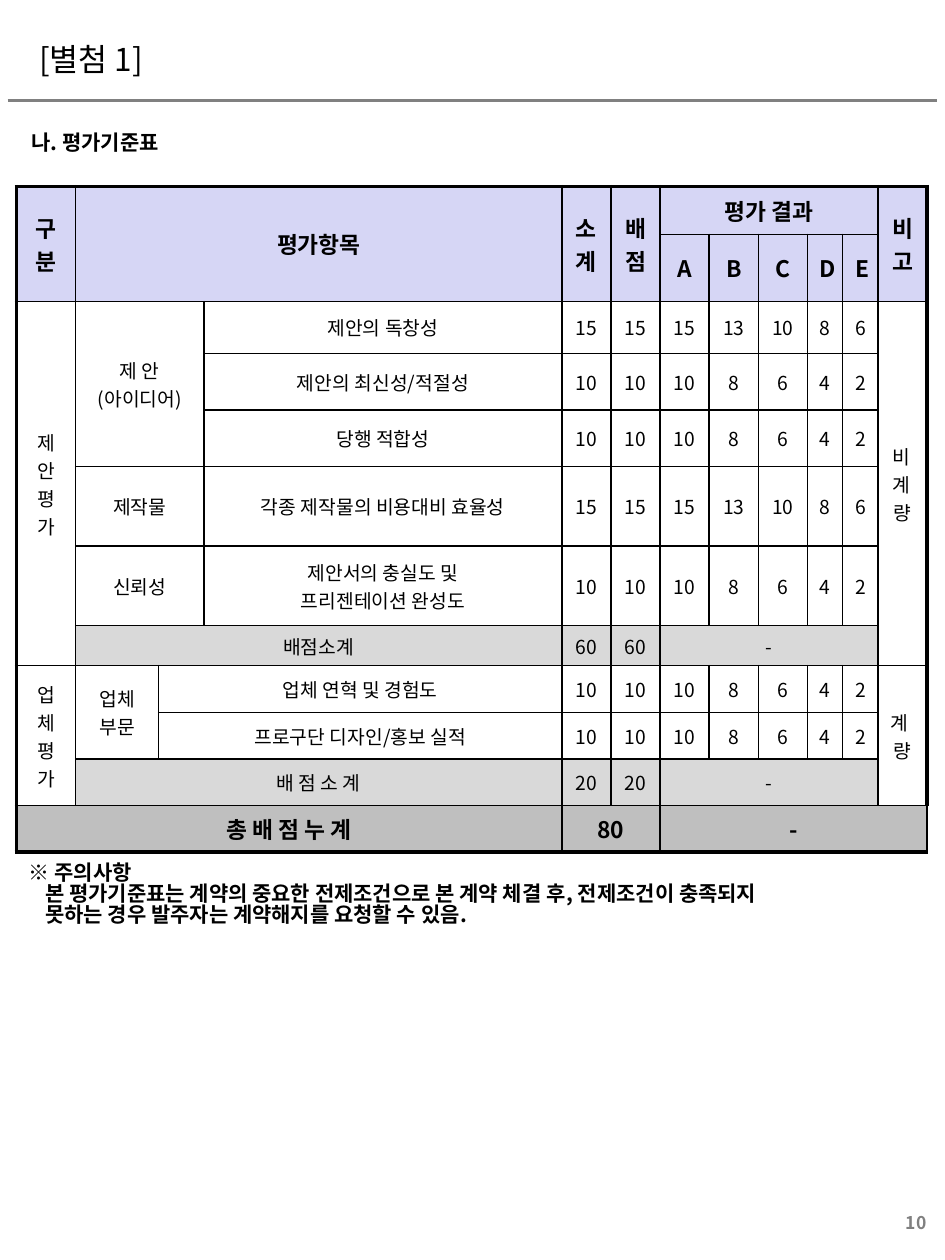
from dataclasses import dataclass

from lxml import etree
from pptx import Presentation
from pptx.dml.color import RGBColor
from pptx.enum.shapes import MSO_CONNECTOR
from pptx.enum.text import MSO_ANCHOR, PP_ALIGN
from pptx.oxml.ns import qn
from pptx.util import Inches, Pt

LEFT, CENTER, RIGHT = PP_ALIGN.LEFT, PP_ALIGN.CENTER, PP_ALIGN.RIGHT
MIDDLE, TOP = MSO_ANCHOR.MIDDLE, MSO_ANCHOR.TOP
STRAIGHT = MSO_CONNECTOR.STRAIGHT
GRID_COLUMNS, GRID_ROWS = 750, 1000


@dataclass(frozen=True)
class Theme:
    font: str = "Noto Sans CJK KR"
    ink: str = "000000"
    muted: str = "808080"
    plain: str = "FFFFFF"
    header: str = "D6D6F5"
    subtotal: str = "D9D9D9"
    total: str = "BFBFBF"
    title_size: float = 18
    head_size: float = 13
    note_size: float = 12
    cell_size: float = 11
    page_size: float = 10
    thin: float = 1
    rule: float = 1.5
    thick: float = 2.25
    tight: float = 0.83


class SlideBuilder:
    def __init__(self, deck, theme):
        self.theme = theme
        self.column = deck.slide_width // GRID_COLUMNS
        self.row = deck.slide_height // GRID_ROWS
        self.page = deck.slides.add_slide(deck.slide_layouts[5])

    def place(self, left, top, width, height):
        return left * self.column, top * self.row, width * self.column, height * self.row

    def set_lines(self, frame, lines, size, bold=False, color=None, align=LEFT, spacing=None):
        for index, line in enumerate(lines):
            para = frame.paragraphs[0] if index == 0 else frame.add_paragraph()
            para.text = line
            para.alignment = align
            para.line_spacing = spacing
            para.font.size = Pt(size)
            para.font.bold = bold
            para.font.color.rgb = RGBColor.from_string(color or self.theme.ink)
            para.font.name = self.theme.font
            for style in para._p.iter(qn("a:defRPr")):
                etree.SubElement(style, qn("a:ea"), typeface=self.theme.font)

    def title(self, text, area):
        box = self.page.shapes.title
        box.left, box.top, box.width, box.height = self.place(*area)
        box.text_frame.vertical_anchor = MIDDLE
        self.set_lines(box.text_frame, [text], self.theme.title_size)

    def text(self, lines, area, size, inset=None, **style):
        frame = self.page.shapes.add_textbox(*self.place(*area)).text_frame
        frame.word_wrap = True
        frame.vertical_anchor = TOP
        if inset is not None:
            frame.margin_left = frame.margin_right = inset * self.column
            frame.margin_top = frame.margin_bottom = inset * self.row
        self.set_lines(frame, lines, size, **style)
        return frame

    def indent(self, para, margin, first=0):
        properties = para._p.get_or_add_pPr()
        properties.set("marL", str(margin * self.column))
        properties.set("indent", str(first * self.column))

    def rule(self, left, right, height):
        line = self.page.shapes.add_connector(
            STRAIGHT, left * self.column, height * self.row, right * self.column, height * self.row)
        line.line.color.rgb = RGBColor.from_string(self.theme.muted)
        line.line.width = Pt(self.theme.rule)
        etree.SubElement(line._element.spPr, qn("a:effectLst"))

    def table(self, left, top, widths, heights):
        area = self.place(left, top, sum(widths), sum(heights))
        table = self.page.shapes.add_table(len(heights), len(widths), *area).table
        table.first_row = table.horz_banding = False
        for column, width in zip(table.columns, widths):
            column.width = width * self.column
        for row, height in zip(table.rows, heights):
            row.height = height * self.row
        for r in range(len(heights)):
            for c in range(len(widths)):
                outer = {"L": c == 0, "R": c == len(widths) - 1,
                         "T": r == 0, "B": r == len(heights) - 1}
                self.borders(table.cell(r, c), outer)
        return table

    def borders(self, cell, outer):
        properties = cell._tc.get_or_add_tcPr()
        for side, heavy in outer.items():
            width = self.theme.thick if heavy else self.theme.thin
            line = etree.SubElement(properties, qn(f"a:ln{side}"), w=str(Pt(width)))
            fill = etree.SubElement(line, qn("a:solidFill"))
            etree.SubElement(fill, qn("a:srgbClr"), val=self.theme.ink)

    def cell(self, table, row, column, text, fill, span=(1, 1), head=False,
             vertical=False, tracking=0):
        cell = table.cell(row, column)
        if span != (1, 1):
            cell.merge(table.cell(row + span[0] - 1, column + span[1] - 1))
        cell.vertical_anchor = MIDDLE
        cell.fill.solid()
        cell.fill.fore_color.rgb = RGBColor.from_string(fill)
        if vertical:
            cell._tc.get_or_add_tcPr().set("vert", "eaVert")
        size = self.theme.head_size if head else self.theme.cell_size
        self.set_lines(cell.text_frame, text.split("\n"), size, bold=head, align=CENTER)
        if tracking:
            for span_run in cell.text_frame.paragraphs[0].runs:
                span_run._r.get_or_add_rPr().set("spc", str(tracking))


WIDTHS = [47, 66, 36, 284, 39, 39, 39, 39, 39, 28, 28, 39]
HEIGHTS = [38, 32, 41, 45, 45, 63, 63, 32, 37, 37, 37, 37]
GRADES = {15: [15, 13, 10, 8, 6], 10: [10, 8, 6, 4, 2]}
HEADERS = [(0, "구 분", 1, True), (1, "평가항목", 3, False),
           (4, "소 계", 1, True), (5, "배 점", 1, True), (11, "비 고", 1, True)]
SIDES = [(2, 0, "제 안 평 가", 6, 0), (2, 11, "비 계 량", 6, 140),
         (8, 0, "업 체 평 가", 3, 0), (8, 11, "계 량", 3, 300)]
GROUPS = [(2, "제 안\n(아이디어)", (3, 2)), (5, "제작물", (1, 2)),
          (6, "신뢰성", (1, 2)), (8, "업체\n부문", (2, 1))]
ITEMS = [(2, 3, "제안의 독창성", 15), (3, 3, "제안의 최신성/적절성", 10),
         (4, 3, "당행 적합성", 10), (5, 3, "각종 제작물의 비용대비 효율성", 15),
         (6, 3, "제안서의 충실도 및\n프리젠테이션 완성도", 10),
         (8, 2, "업체 연혁 및 경험도", 10), (9, 2, "프로구단 디자인/홍보 실적", 10)]
SUBTOTALS = [(7, "배점소계", "60"), (10, "배 점 소 계", "20")]
TOTALS = [(0, "총 배 점 누 계", 4), (4, "80", 2), (6, "-", 6)]


def fill_criteria(builder, table):
    theme = builder.theme
    for column, text, width, vertical in HEADERS:
        builder.cell(table, 0, column, text, theme.header, (2, width), True, vertical)
    builder.cell(table, 0, 6, "평가 결과", theme.header, (1, 5), True)
    for column, grade in enumerate("ABCDE", 6):
        builder.cell(table, 1, column, grade, theme.header, head=True)
    for row, column, text, height, tracking in SIDES:
        builder.cell(table, row, column, text, theme.plain, (height, 1),
                     vertical=True, tracking=tracking)
    for row, text, span in GROUPS:
        builder.cell(table, row, 1, text, theme.plain, span)
    for row, column, text, points in ITEMS:
        builder.cell(table, row, column, text, theme.plain, (1, 4 - column))
        for score_column, score in enumerate([points, points] + GRADES[points], 4):
            builder.cell(table, row, score_column, str(score), theme.plain)
    for row, text, points in SUBTOTALS:
        for column, entry, width in [(1, text, 3), (4, points, 1), (5, points, 1), (6, "-", 5)]:
            builder.cell(table, row, column, entry, theme.subtotal, (1, width))
    for column, text, width in TOTALS:
        builder.cell(table, 11, column, text, theme.total, (1, width), head=True)


def main():
    deck = Presentation()
    deck.slide_width, deck.slide_height = Inches(7.5), Inches(10)
    theme = Theme()
    builder = SlideBuilder(deck, theme)
    builder.title("[별첨 1]", (21, 27, 607, 40))
    builder.rule(6, 744, 80)
    heading = builder.text(["나. 평가기준표"], (21, 102, 113, 28), theme.note_size,
                           inset=4, bold=True, spacing=theme.tight)
    builder.indent(heading.paragraphs[0], 25, -25)
    fill_criteria(builder, builder.table(13, 148, WIDTHS, HEIGHTS))
    notes = builder.text(
        ["※ 주의사항",
         "본 평가기준표는 계약의 중요한 전제조건으로 본 계약 체결 후, 전제조건이 충족되지",
         "못하는 경우 발주자는 계약해지를 요청할 수 있음."],
        (13, 681, 628, 71), theme.note_size, bold=True, spacing=theme.tight)
    for para in notes.paragraphs[1:]:
        builder.indent(para, 13)
    builder.text(["10"], (576, 957, 169, 37), theme.page_size,
                 bold=True, color=theme.muted, align=RIGHT)
    deck.save("out.pptx")


if __name__ == "__main__":
    main()
